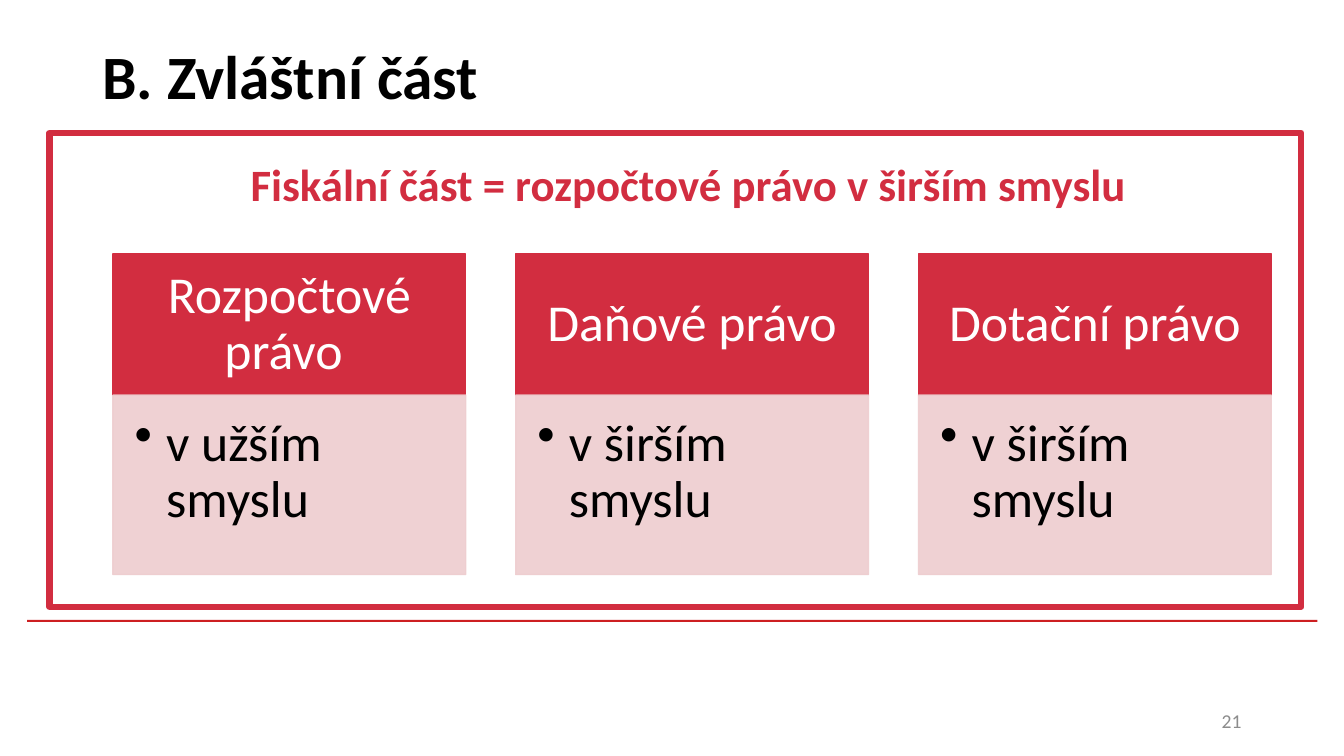
from lxml.etree import SubElement
from pptx import Presentation
from pptx.dml.color import RGBColor
from pptx.enum.shapes import MSO_SHAPE
from pptx.enum.text import MSO_ANCHOR, PP_ALIGN
from pptx.oxml.ns import qn
from pptx.util import Pt

RED = RGBColor(0xD2, 0x2D, 0x40)
RULE_RED = RGBColor(0xCD, 0x1F, 0x21)
PINK = RGBColor(0xEE, 0xCD, 0xCF)
GRAY = RGBColor(0x8C, 0x8C, 0x8C)
BLACK = RGBColor(0, 0, 0)
WHITE = RGBColor(0xFF, 0xFF, 0xFF)

COLUMNS = [
    ("Rozpočtové právo ", "v užším smyslu"),
    ("Daňové právo", "v širším smyslu"),
    ("Dotační právo", "v širším smyslu"),
]
COLUMN_LEFT, COLUMN_PITCH, COLUMN_WIDTH = 80.7, 287.7, 252
HEADER_TOP, HEADER_HEIGHT, BODY_HEIGHT = 181.4, 100.8, 128.2
BULLET_INDENT = 22.5


def set_alpha(color_format_parent, percent):
    """Make the solid colour inside a fill partly transparent."""
    color = color_format_parent.find(qn("a:solidFill"))[0]
    SubElement(color, qn("a:alpha"), val=str(percent * 1000))


def add_bullet(paragraph):
    properties = paragraph._p.get_or_add_pPr()
    properties.set("marL", str(Pt(BULLET_INDENT)))
    properties.set("indent", str(-Pt(BULLET_INDENT)))
    SubElement(properties, qn("a:buChar"), char="•")


def write_text(shape, text, size, color, bold=False, align=PP_ALIGN.LEFT,
               anchor=MSO_ANCHOR.MIDDLE, insets=(7.2, 3.6, 7.2, 3.6),
               line_spacing=None, bullet=False):
    frame = shape.text_frame
    frame.word_wrap = True
    frame.vertical_anchor = anchor
    frame.margin_left, frame.margin_top, frame.margin_right, frame.margin_bottom = map(Pt, insets)
    paragraph = frame.paragraphs[0]
    paragraph.alignment = align
    if line_spacing:
        paragraph.line_spacing = line_spacing
    if bullet:
        add_bullet(paragraph)
    run = paragraph.add_run()
    run.text = text
    run.font.name = "Calibri"
    run.font.size = Pt(size)
    run.font.bold = bold
    run.font.color.rgb = color


def add_text(slide, left, top, width, height, text, **text_format):
    box = slide.shapes.add_textbox(Pt(left), Pt(top), Pt(width), Pt(height))
    write_text(box, text, **text_format)


def add_rectangle(slide, left, top, width, height, fill, line=None, line_width=1, alpha=None):
    shape = slide.shapes.add_shape(MSO_SHAPE.RECTANGLE, Pt(left), Pt(top), Pt(width), Pt(height))
    shape.shadow.inherit = False
    shape.fill.solid()
    shape.fill.fore_color.rgb = fill
    if line is None:
        shape.line.fill.background()
    else:
        shape.line.color.rgb = line
        shape.line.width = Pt(line_width)
    if alpha:
        properties = shape._element.spPr
        set_alpha(properties, alpha)
        set_alpha(properties.find(qn("a:ln")), alpha)
    return shape


def add_column(slide, left, heading, detail):
    header = add_rectangle(slide, left, HEADER_TOP, COLUMN_WIDTH, HEADER_HEIGHT, RED, line=RED)
    write_text(header, heading, size=37, color=WHITE, align=PP_ALIGN.CENTER,
               insets=(20.7, 11.8, 20.7, 11.8), line_spacing=0.9)
    body = add_rectangle(slide, left, HEADER_TOP + HEADER_HEIGHT, COLUMN_WIDTH, BODY_HEIGHT,
                         PINK, line=PINK, alpha=90)
    write_text(body, detail, size=37, color=BLACK, anchor=MSO_ANCHOR.TOP,
               insets=(15.5, 15.5, 20.7, 23.3), line_spacing=0.9, bullet=True)


def main():
    presentation = Presentation()
    presentation.slide_width, presentation.slide_height = Pt(960), Pt(540)
    slide = presentation.slides.add_slide(presentation.slide_layouts[6])

    # Footer rule, title and slide number
    add_rectangle(slide, 19.4, 442.8, 921.6, 1.5, RULE_RED)
    add_text(slide, 66, 1.5, 828, 104.4, "B. Zvláštní část", size=44, color=BLACK, bold=True)
    add_text(slide, 678, 500.5, 216, 28.8, "21", size=14, color=GRAY, align=PP_ALIGN.RIGHT)

    # Frame with its three columns
    add_rectangle(slide, 35.3, 95, 894.2, 338.4, WHITE, line=RED, line_width=4.5)
    for index, (heading, detail) in enumerate(COLUMNS):
        add_column(slide, COLUMN_LEFT + index * COLUMN_PITCH, heading, detail)

    # Frame heading
    add_text(slide, 81.4, 108.7, 820.8, 46, "Fiskální část = rozpočtové právo v širším smyslu",
             size=32, color=RED, bold=True, align=PP_ALIGN.CENTER, anchor=MSO_ANCHOR.TOP)

    presentation.save("out.pptx")


if __name__ == "__main__":
    main()
